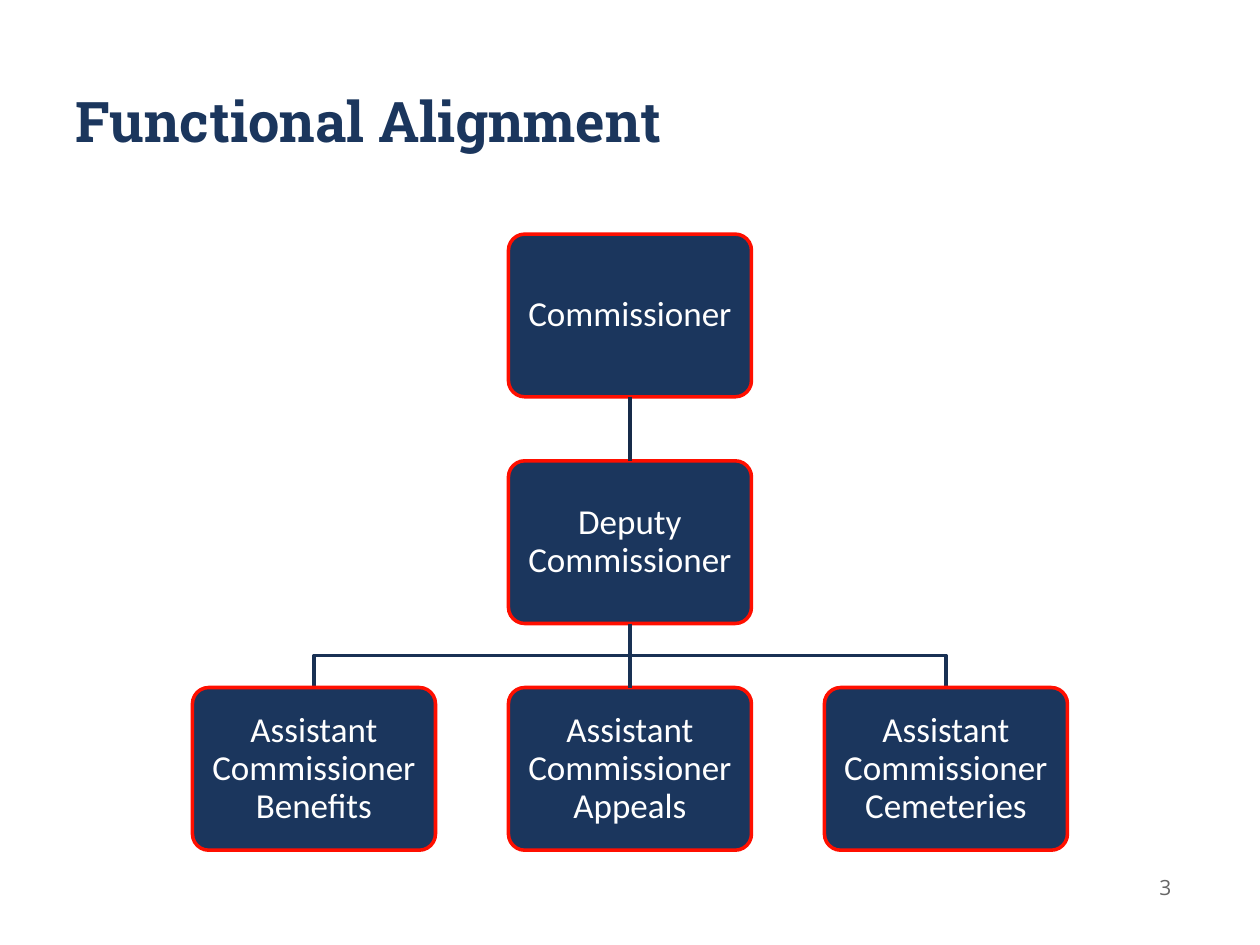
from dataclasses import dataclass

from pptx import Presentation
from pptx.dml.color import RGBColor as Rgb
from pptx.enum.shapes import MSO_CONNECTOR as Link, MSO_SHAPE as Kind
from pptx.enum.text import MSO_ANCHOR as Anchor, PP_ALIGN as Align
from pptx.oxml.ns import qn
from pptx.shapes.autoshape import Shape
from pptx.slide import Slide
from pptx.text.text import TextFrame
from pptx.util import Cm, Pt
from lxml.etree import SubElement

COLORS = {
    "navy": "1B365D",
    "red": "FF0F00",
    "white": "FFFFFF",
    "gray": "666666",
    "trunk": "162B4A",
    "branch": "193154",
}

# Chart grid, in centimetres
MID, TOP = 12.7, 4.72
COL, ROW = 6.37, 4.57
WIDE, HIGH = 4.9, 3.28
BOTTOM, LEFT, RIGHT = 2, -1, 1


@dataclass
class Post:
    title: str
    col: int
    row: int

    @property
    def mid(self) -> float:
        return MID + self.col * COL

    @property
    def top(self) -> float:
        return TOP + self.row * ROW


def color(name: str) -> Rgb:
    return Rgb.from_string(COLORS[name])


def write(frame: TextFrame, text: str, font: str, size: int, tint: str,
          align: Align, bold: bool = False) -> None:
    frame.text = text
    frame.word_wrap = True
    frame.vertical_anchor = Anchor.MIDDLE
    para = frame.paragraphs[0]
    para.alignment = align
    para.font.name = font
    para.font.size = Pt(size)
    para.font.bold = bold
    para.font.color.rgb = color(tint)


def draw_post(slide: Slide, post: Post) -> Shape:
    box = slide.shapes.add_shape(
        Kind.ROUNDED_RECTANGLE, Cm(post.mid - WIDE / 2), Cm(post.top),
        Cm(WIDE), Cm(HIGH))
    box.adjustments[0] = 0.1
    box.shadow.inherit = False
    box.fill.solid()
    box.fill.fore_color.rgb = color("navy")
    box.line.color.rgb = color("red")
    box.line.width = Pt(2)
    frame = box.text_frame
    frame.margin_left = frame.margin_right = Cm(0.2)
    frame.margin_top = frame.margin_bottom = Cm(0.2)
    write(frame, post.title, "Calibri", 20, "white", Align.CENTER)
    frame.paragraphs[0].line_spacing = 0.9
    return box


def join(slide: Slide, upper: Shape, lower: Shape, tint: str) -> None:
    line = slide.shapes.add_connector(Link.STRAIGHT, 0, 0, 0, 0)
    line.begin_connect(upper, 2)
    line.end_connect(lower, 0)
    line.line.color.rgb = color(tint)
    line.line.width = Pt(2)
    SubElement(line._element.spPr, qn("a:effectLst"))


def draw_elbow(slide: Slide, boss: Post, post: Post) -> None:
    start = boss.top + HIGH
    bend = (start + post.top) / 2
    pen = slide.shapes.build_freeform(Cm(boss.mid), Cm(start))
    pen.add_line_segments(
        [(Cm(boss.mid), Cm(bend)), (Cm(post.mid), Cm(bend)),
         (Cm(post.mid), Cm(post.top))], close=False)
    elbow = pen.convert_to_shape()
    elbow.shadow.inherit = False
    elbow.fill.background()
    elbow.line.color.rgb = color("branch")
    elbow.line.width = Pt(2)


def main() -> None:
    deck = Presentation()
    deck.slide_width, deck.slide_height = Cm(25.4), Cm(19.05)
    slide = deck.slides.add_slide(deck.slide_layouts[5])

    # Title
    title = slide.shapes.title
    title.left, title.top = Cm(1.27), Cm(0.84)
    title.width, title.height = Cm(22.86), Cm(3.18)
    write(title.text_frame, "Functional Alignment", "Roboto Slab", 32,
          "navy", Align.LEFT, bold=True)

    # Posts
    head = Post("Commissioner", 0, 0)
    deputy = Post("Deputy Commissioner", 0, 1)
    areas = {LEFT: "Benefits", 0: "Appeals", RIGHT: "Cemeteries"}
    staff = [Post(f"Assistant Commissioner {area}", col, 2)
             for col, area in areas.items()]

    # Lines of report
    for post in staff:
        if post.col:
            draw_elbow(slide, deputy, post)
    boxes = [draw_post(slide, post) for post in (head, deputy, *staff)]
    join(slide, boxes[0], boxes[1], "trunk")
    join(slide, boxes[1], boxes[3], "branch")

    # Page number
    page = slide.shapes.add_textbox(Cm(22.86), Cm(17.35), Cm(1.27), Cm(1.07))
    write(page.text_frame, "3", "Open Sans", 12, "gray", Align.CENTER)

    deck.save("out.pptx")


if __name__ == "__main__":
    main()
